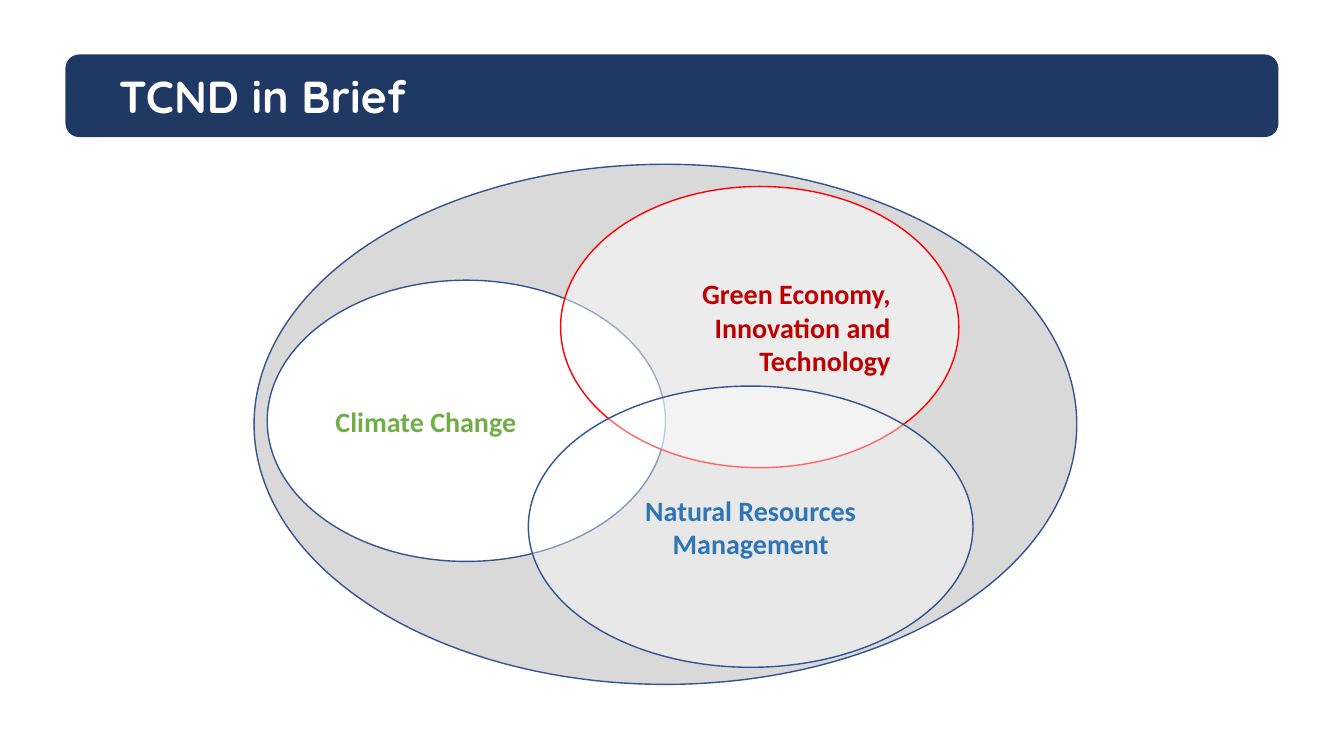
from dataclasses import dataclass
from typing import Optional

from lxml.etree import SubElement
from pptx import Presentation
from pptx.dml.color import RGBColor
from pptx.enum.shapes import MSO_SHAPE as Shape
from pptx.enum.text import MSO_ANCHOR as Anchor, PP_ALIGN as Align
from pptx.oxml.ns import qn
from pptx.util import Inches, Pt

NAVY, BLUE_LINE, RED, WHITE, GREY = "203864", "325491", "FF0000", "FFFFFF", "D9D9D9"


@dataclass
class Label:
    text: str
    color: str
    align: Align = Align.LEFT
    size: int = 20
    font: str = "Calibri"
    indent: float = 0
    margin_y: float = 0.05


@dataclass
class Block:
    left: float
    top: float
    width: float
    height: float
    fill: str
    line: Optional[str] = None
    opacity: int = 100
    label: Optional[Label] = None
    kind: Shape = Shape.OVAL


def rgb(color: str) -> RGBColor:
    return RGBColor.from_string(color)


def write_label(shape, label: Label) -> None:
    frame = shape.text_frame
    frame.text = label.text
    frame.word_wrap = True
    frame.vertical_anchor = Anchor.MIDDLE
    frame.margin_top = frame.margin_bottom = Inches(label.margin_y)
    paragraph = frame.paragraphs[0]
    paragraph.alignment = label.align
    if label.indent:
        properties = paragraph._p.get_or_add_pPr()
        properties.set("marL", str(Inches(label.indent)))
        properties.set("indent", "0")
    font = paragraph.runs[0].font
    font.name, font.size, font.bold = label.font, Pt(label.size), True
    font.color.rgb = rgb(label.color)


def draw_block(shapes, block: Block) -> None:
    box = map(Inches, (block.left, block.top, block.width, block.height))
    shape = shapes.add_shape(block.kind, *box)
    shape.shadow.inherit = False
    shape.fill.solid()
    shape.fill.fore_color.rgb = rgb(block.fill)
    if block.opacity < 100:
        color = shape._element.spPr.find(qn("a:solidFill"))[0]
        SubElement(color, qn("a:alpha"), val=str(block.opacity * 1000))
    if block.line:
        shape.line.color.rgb = rgb(block.line)
        shape.line.width = Pt(1)
    else:
        shape.line.fill.background()
    if block.label:
        write_label(shape, block.label)


TITLE = Block(0.65, 0.54, 12.03, 0.82, NAVY, kind=Shape.ROUNDED_RECTANGLE,
              label=Label("TCND in Brief", WHITE, size=32, font="Quicksand",
                          indent=0.39, margin_y=0.1))

# Enclosing ellipse first, then the three overlapping themes
ELLIPSES = [
    Block(2.52, 1.63, 8.16, 5.16, GREY, BLUE_LINE),
    Block(2.65, 2.78, 3.95, 2.79, WHITE, BLUE_LINE,
          label=Label("Climate Change", "70AD47")),
    Block(5.56, 1.85, 3.95, 2.79, WHITE, RED, opacity=50,
          label=Label("Green Economy, Innovation and Technology", "C00000", Align.RIGHT)),
    Block(5.24, 3.83, 4.41, 2.79, WHITE, BLUE_LINE, opacity=40,
          label=Label("Natural Resources Management", "2E75B6", Align.CENTER)),
]


def main() -> None:
    presentation = Presentation()
    presentation.slide_width, presentation.slide_height = Inches(13.33), Inches(7.5)
    slide = presentation.slides.add_slide(presentation.slide_layouts[6])

    # Title bar
    draw_block(slide.shapes, TITLE)

    # Venn diagram
    diagram = slide.shapes.add_group_shape()
    for ellipse in ELLIPSES:
        draw_block(diagram.shapes, ellipse)

    presentation.save("out.pptx")


if __name__ == "__main__":
    main()
